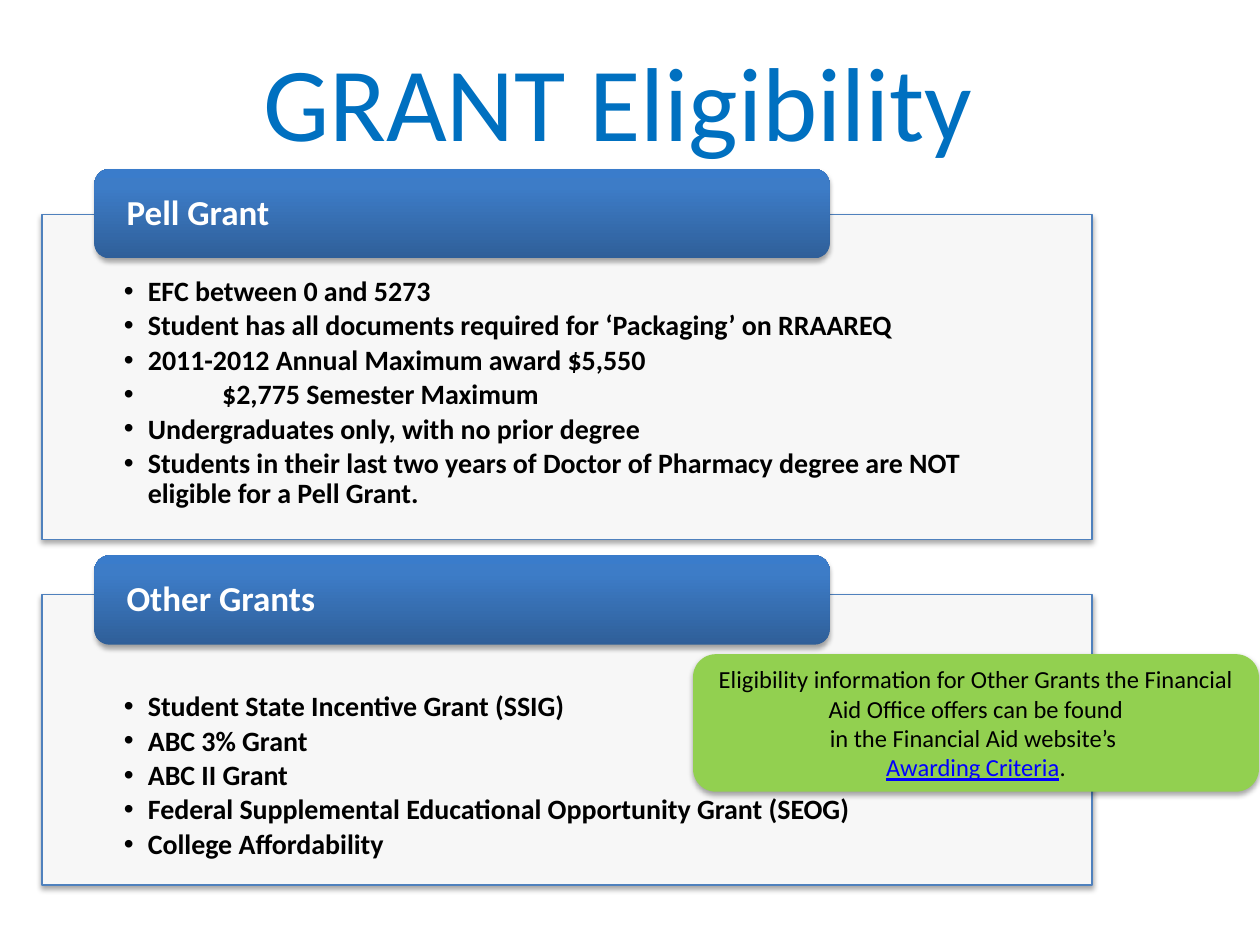
from copy import deepcopy

from lxml.etree import SubElement
from pptx import Presentation
from pptx.dml.color import RGBColor
from pptx.enum.shapes import MSO_SHAPE
from pptx.enum.text import MSO_ANCHOR, MSO_AUTO_SIZE, PP_ALIGN
from pptx.oxml.ns import qn
from pptx.util import Inches, Pt

SLIDE_WIDTH, SLIDE_HEIGHT = Inches(10), Inches(7.5)
COLUMNS, ROWS = 120, 90
TITLE_AREA = (6, 2, 108, 15)
PANEL_LEFT, PANEL_WIDTH = 4, 100
HEADING_LEFT, HEADING_WIDTH, HEADING_HEIGHT = 9, 70, 8.5
CALLOUT_AREA = (66, 62.3, 53.9, 13.1)
HEADING_GRADIENT = [(0, "2F5F99"), (0.8, "3D7CC7"), (1, "3A7CCB")]
BULLET_INDENT, DEEP_INDENT = 0.19, 0.78

SECTIONS = [
    {
        "heading": "Pell Grant", "heading_top": 16.1,
        "panel_top": 20.4, "panel_height": 31, "inset_top": 0.5,
        "items": [
            ("EFC between 0 and 5273", BULLET_INDENT),
            ("Student has all documents required for ‘Packaging’ on RRAAREQ", BULLET_INDENT),
            ("2011-2012 Annual Maximum award $5,550", BULLET_INDENT),
            ("$2,775 Semester Maximum", DEEP_INDENT),
            ("Undergraduates only, with no prior degree", BULLET_INDENT),
            ("Students in their last two years of Doctor of Pharmacy degree "
             "are NOT eligible for a Pell Grant.", BULLET_INDENT),
        ],
    },
    {
        "heading": "Other Grants", "heading_top": 52.9,
        "panel_top": 56.6, "panel_height": 27.7, "inset_top": 0.78,
        "items": [
            ("Student State Incentive Grant (SSIG)", BULLET_INDENT),
            ("ABC 3% Grant", BULLET_INDENT),
            ("ABC II Grant", BULLET_INDENT),
            ("Federal Supplemental Educational Opportunity Grant (SEOG)", BULLET_INDENT),
            ("College Affordability", BULLET_INDENT),
        ],
    },
]
CALLOUT_LINES = [
    ["Eligibility information for Other Grants the Financial Aid Office offers can be found"],
    ["in the Financial Aid website’s "],
    ["Awarding Criteria", "."],
]


def color(value):
    return RGBColor.from_string(value)


def grid_area(left, top, width, height):
    column, row = SLIDE_WIDTH / COLUMNS, SLIDE_HEIGHT / ROWS
    return int(left * column), int(top * row), int(width * column), int(height * row)


def place(shape, area):
    shape.left, shape.top, shape.width, shape.height = grid_area(*area)


def set_font(font, size, value, bold=False):
    font.name, font.size, font.bold = "Calibri", Pt(size), bold
    font.color.rgb = color(value)


def set_insets(frame, left, top, right, bottom):
    frame.margin_left, frame.margin_top = Inches(left), Inches(top)
    frame.margin_right, frame.margin_bottom = Inches(right), Inches(bottom)


def add_shadow(shape):
    shape.shadow.inherit = False
    effects = shape._element.spPr.find(qn("a:effectLst"))
    shadow = SubElement(effects, qn("a:outerShdw"), blurRad=str(Pt(3.1)),
                        dist=str(Pt(1.8)), dir="5400000", rotWithShape="0")
    shadow_color = SubElement(shadow, qn("a:srgbClr"), val="000000")
    SubElement(shadow_color, qn("a:alpha"), val="35000")


def set_bullet(paragraph, indent):
    properties = paragraph._p.get_or_add_pPr()
    properties.set("marL", str(Inches(indent)))
    properties.set("indent", str(-Inches(indent)))
    SubElement(properties, qn("a:buChar"), char="•")


def fill_gradient(shape, stops):
    shape.fill.gradient()
    shape.fill.gradient_angle = 90
    stop_list = shape._element.spPr.find(f".//{qn('a:gsLst')}")
    stop_list.append(deepcopy(stop_list[-1]))
    for stop, (position, value) in zip(shape.fill.gradient_stops, stops):
        stop.position = position
        stop.color.rgb = color(value)


def write_title(title):
    place(title, TITLE_AREA)
    frame = title.text_frame
    frame.text = "GRANT Eligibility "
    frame.vertical_anchor = MSO_ANCHOR.MIDDLE
    frame.auto_size = MSO_AUTO_SIZE.NONE
    frame.paragraphs[0].alignment = PP_ALIGN.CENTER
    set_font(frame.paragraphs[0].font, 60, "0070C0")


def write_panel(panel, section):
    place(panel, (PANEL_LEFT, section["panel_top"], PANEL_WIDTH, section["panel_height"]))
    panel.fill.solid()
    panel.fill.fore_color.rgb = color("F7F7F7")
    panel.line.color.rgb = color("4F81BD")
    panel.line.width = Pt(0.75)
    add_shadow(panel)
    frame = panel.text_frame
    frame.auto_size = MSO_AUTO_SIZE.NONE
    frame.vertical_anchor = MSO_ANCHOR.TOP
    set_insets(frame, 0.65, section["inset_top"], 0.65, 0.12)
    frame.text = "\n".join(text for text, indent in section["items"])
    for paragraph, (text, indent) in zip(frame.paragraphs, section["items"]):
        paragraph.line_spacing = 0.9
        paragraph.space_before, paragraph.space_after = Pt(0), Pt(2.4)
        set_bullet(paragraph, indent)
        set_font(paragraph.font, 16, "000000", bold=True)


def add_rounded_box(slide, area):
    box = slide.shapes.add_shape(MSO_SHAPE.ROUNDED_RECTANGLE, *grid_area(*area))
    box.line.fill.background()
    add_shadow(box)
    box.text_frame.word_wrap = True
    box.text_frame.vertical_anchor = MSO_ANCHOR.MIDDLE
    return box


def add_heading(slide, section):
    heading = add_rounded_box(
        slide, (HEADING_LEFT, section["heading_top"], HEADING_WIDTH, HEADING_HEIGHT))
    fill_gradient(heading, HEADING_GRADIENT)
    frame = heading.text_frame
    set_insets(frame, 0.22, 0, 0.22, 0)
    frame.text = section["heading"]
    paragraph = frame.paragraphs[0]
    paragraph.alignment = PP_ALIGN.LEFT
    paragraph.line_spacing = 0.9
    set_font(paragraph.font, 20, "FFFFFF", bold=True)


def add_callout(slide):
    callout = add_rounded_box(slide, CALLOUT_AREA)
    callout.fill.solid()
    callout.fill.fore_color.rgb = color("92D050")
    frame = callout.text_frame
    frame.text = "\n".join("" for line in CALLOUT_LINES)
    for paragraph, line in zip(frame.paragraphs, CALLOUT_LINES):
        paragraph.alignment = PP_ALIGN.CENTER
        set_font(paragraph.font, 14, "000000")
        for text in line:
            paragraph.add_run().text = text
    reference = frame.paragraphs[-1].runs[0].font
    reference.color.rgb = color("0000FF")
    reference.underline = True


def main():
    presentation = Presentation()
    presentation.slide_width, presentation.slide_height = SLIDE_WIDTH, SLIDE_HEIGHT
    slide = presentation.slides.add_slide(presentation.slide_layouts.get_by_name("Two Content"))
    title, *panels = slide.placeholders
    write_title(title)
    for panel, section in zip(panels, SECTIONS):
        write_panel(panel, section)
        add_heading(slide, section)
    add_callout(slide)
    presentation.save("out.pptx")


if __name__ == "__main__":
    main()
